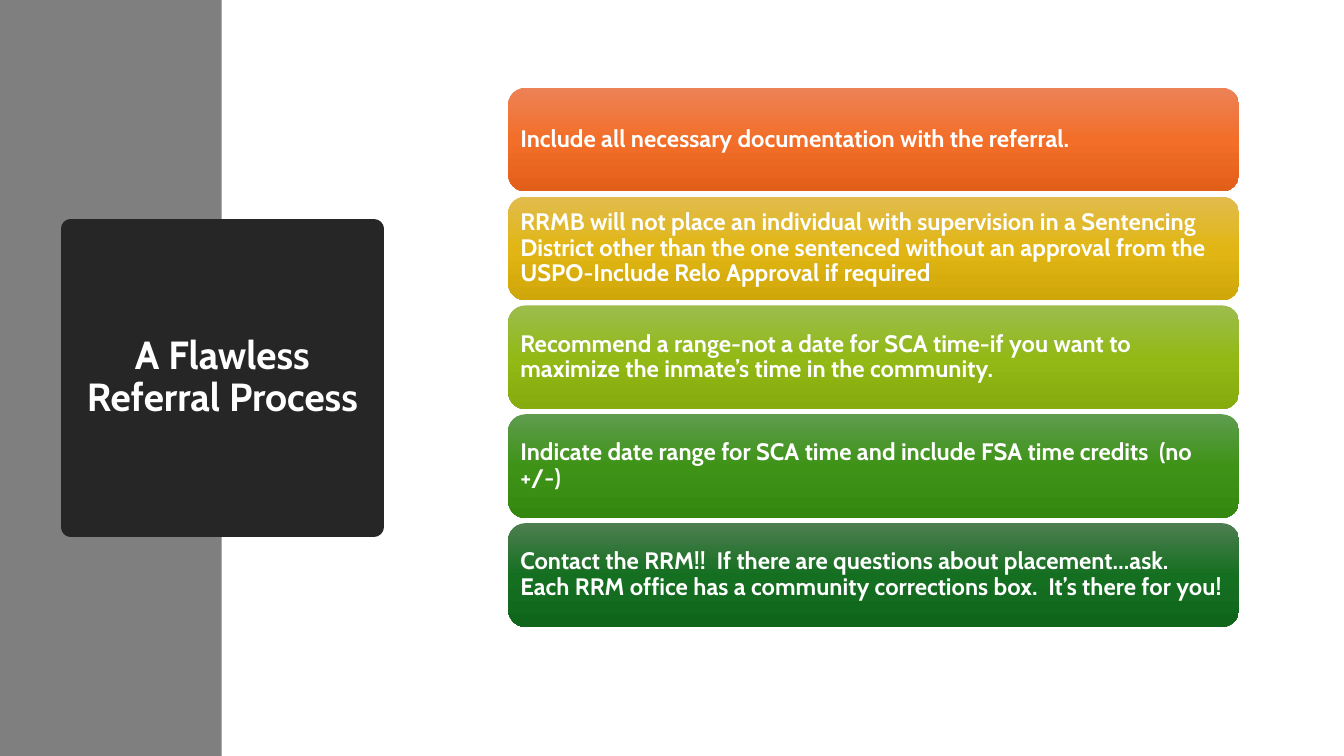
from copy import deepcopy

from pptx import Presentation
from pptx import util as u
from pptx.dml.color import RGBColor
from pptx.enum import shapes, text
from pptx.oxml.ns import qn
from pptx.oxml.xmlchemy import OxmlElement

SLIDE_W, SLIDE_H = 13.33, 7.5
COLORS = {"band": "7F7F7F", "title": "262626", "text": "FFFFFF"}

# Tip column: one step per row
TIP_LEFT, TIP_TOP, TIP_W, TIP_H, TIP_STEP = 5.04, 0.87, 7.25, 1.03, 1.08
TIPS = [
    ("Include all necessary documentation with the referral.",
     ("ED8257", "F26E29", "E25F1A")),
    ("RRMB will not place an individual with supervision in a Sentencing District other "
     "than the one sentenced without an approval from the USPO-Include Relo Approval if required",
     ("E1BC4E", "E1B614", "D0A70A")),
    ("Recommend a range-not a date for SCA time-if you want to maximize the inmate’s time "
     "in the community.",
     ("9CBD4E", "92B916", "85AB0D")),
    ("Indicate date range for SCA time and include FSA time credits  (no +/-)",
     ("5E9C4E", "3E9317", "35880F")),
    ("Contact the RRM!!  If there are questions about placement…ask.  Each RRM office has "
     "a community corrections box.  It’s there for you!",
     ("4D7E50", "156F21", "0F661B")),
]


def rgb(value):
    return RGBColor.from_string(value)


def set_all(target, values):
    for name, value in values.items():
        setattr(target, name, value)


def add_block(slide, kind, left, top, width, height, fill=None):
    block = slide.shapes.add_shape(kind, *map(u.Inches, (left, top, width, height)))
    block.shadow.inherit = False
    block.line.fill.background()
    if fill:
        block.fill.solid()
        block.fill.fore_color.rgb = rgb(fill)
    return block


def write(block, wording, size, align, inset):
    frame = block.text_frame
    set_all(frame, {"word_wrap": True, "vertical_anchor": text.MSO_ANCHOR.MIDDLE,
                    "margin_left": u.Inches(inset), "margin_right": u.Inches(inset)})
    paragraph = frame.paragraphs[0]
    set_all(paragraph, {"text": wording, "alignment": align, "line_spacing": 0.9})
    font = paragraph.runs[0].font
    set_all(font, {"name": "Cabin", "size": u.Pt(size), "bold": True})
    font.color.rgb = rgb(COLORS["text"])


def shade(block, colors):
    """Fill with evenly spaced colours from top to bottom."""
    block.fill.gradient()
    block.fill.gradient_angle = 270
    stop_list = block._element.spPr.find(".//" + qn("a:gsLst"))
    stop_list.insert(1, deepcopy(stop_list[0]))
    for i, (stop, color) in enumerate(zip(block.fill.gradient_stops, colors)):
        stop.color.rgb = rgb(color)
        stop.position = i / (len(colors) - 1)


def add_title(slide):
    title = add_block(slide, shapes.MSO_SHAPE.RECTANGLE, 0.7, 2.27, 3.01, 2.96, COLORS["title"])
    title.line.color.rgb = rgb(COLORS["title"])
    title.line.width = u.Pt(13.75)
    # The thick outline rounds the corners
    title.line._get_or_add_ln().append(OxmlElement("a:round"))
    write(title, "A Flawless Referral Process", 28, text.PP_ALIGN.CENTER, 0.1)


def add_tip(slide, row, wording, colors):
    tip = add_block(slide, shapes.MSO_SHAPE.ROUNDED_RECTANGLE,
                    TIP_LEFT, TIP_TOP + row * TIP_STEP, TIP_W, TIP_H)
    shade(tip, colors)
    write(tip, wording, 17, text.PP_ALIGN.LEFT, 0.07)


def main():
    deck = Presentation()
    deck.slide_width, deck.slide_height = u.Inches(SLIDE_W), u.Inches(SLIDE_H)
    slide = deck.slides.add_slide(deck.slide_layouts[6])

    # Side band and title
    add_block(slide, shapes.MSO_SHAPE.RECTANGLE, 0, 0, 2.2, SLIDE_H, COLORS["band"])
    add_title(slide)

    # Tips
    for row, (wording, colors) in enumerate(TIPS):
        add_tip(slide, row, wording, colors)

    deck.save("out.pptx")


if __name__ == "__main__":
    main()
